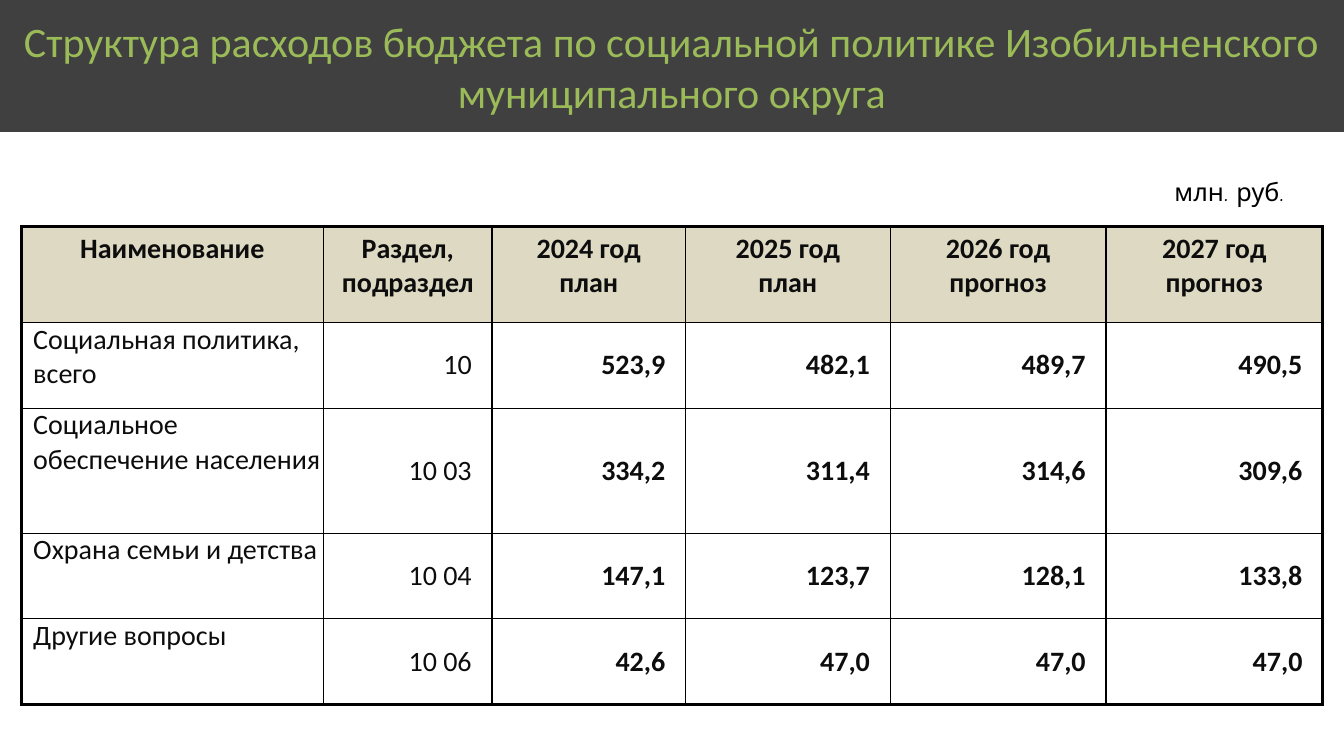
from lxml.etree import SubElement
from pptx import Presentation
from pptx.dml.color import RGBColor as Color
from pptx.enum.shapes import MSO_SHAPE as Shape
from pptx.enum.text import MSO_ANCHOR as Anchor, PP_ALIGN as Align
from pptx.oxml.ns import qn
from pptx.util import Inches, Pt

COLORS = {
    "band": "404040",
    "title": "9BBB59",
    "header": "DDD9C3",
    "cell": "0D0D0D",
    "black": "000000",
}
COLUMN_WIDTHS = [3, 1.67, 1.92, 2.03, 2.14, 2.15]
ROW_HEIGHTS = [0.95, 0.85, 1.24, 0.85, 0.85]
BUDGET = [
    ["Наименование", "Раздел, подраздел", "2024 год\vплан", "2025 год\vплан",
     "2026 год\vпрогноз", "2027 год\vпрогноз"],
    ["Социальная политика, всего", "10", "523,9", "482,1", "489,7", "490,5"],
    ["Социальное обеспечение населения", "10 03", "334,2", "311,4", "314,6", "309,6"],
    ["Охрана семьи и детства", "10 04", "147,1", "123,7", "128,1", "133,8"],
    ["Другие вопросы", "10 06", "42,6", "47,0", "47,0", "47,0"],
]


def color(name):
    return Color.from_string(COLORS[name])


def write(frame, text, size=20, font="Calibri", ink="cell", bold=False, align=Align.LEFT):
    paragraph = frame.paragraphs[0]
    paragraph.text = text
    paragraph.alignment = align
    for run in paragraph.runs:
        run.font.size = Pt(size)
        run.font.name = font
        run.font.bold = bold
        run.font.color.rgb = color(ink)


def set_margins(target, left, top, right, bottom):
    target.margin_left, target.margin_top = Inches(left), Inches(top)
    target.margin_right, target.margin_bottom = Inches(right), Inches(bottom)


def set_borders(cell, widths):
    """Draw the cell edges; widths maps L, R, T, B to points."""
    properties = cell._tc.get_or_add_tcPr()
    for side, width in widths.items():
        line = SubElement(properties, qn(f"a:ln{side}"), w=str(Pt(width)))
        fill = SubElement(line, qn("a:solidFill"))
        SubElement(fill, qn("a:srgbClr"), val=COLORS["black"])


class BudgetSlide:
    outer_border = 2.25
    inner_border = 1

    def __init__(self, presentation):
        self.slide = presentation.slides.add_slide(presentation.slide_layouts[6])

    def title_band(self, text, left, top, width, height):
        band = self.slide.shapes.add_shape(
            Shape.RECTANGLE, Inches(left), Inches(top), Inches(width), Inches(height))
        band.shadow.inherit = False
        band.fill.solid()
        band.fill.fore_color.rgb = color("band")
        band.line.fill.background()
        band.text_frame.word_wrap = True
        band.text_frame.vertical_anchor = Anchor.MIDDLE
        write(band.text_frame, text, size=30, ink="title", align=Align.CENTER)

    def label(self, text, left, top, width, height):
        box = self.slide.shapes.add_textbox(
            Inches(left), Inches(top), Inches(width), Inches(height))
        box.text_frame.word_wrap = False
        write(box.text_frame, text, size=18, font="Comic Neue", ink="black")

    def table(self, rows, left, top, widths, heights):
        table = self.slide.shapes.add_table(
            len(rows), len(widths), Inches(left), Inches(top),
            Inches(sum(widths)), Inches(sum(heights))).table
        for column, width in zip(table.columns, widths):
            column.width = Inches(width)
        for row, height in zip(table.rows, heights):
            row.height = Inches(height)
        for i, values in enumerate(rows):
            for j, text in enumerate(values):
                cell = table.cell(i, j)
                on_edge = {"L": j == 0, "R": j == len(widths) - 1,
                           "T": i == 0, "B": i == len(rows) - 1}
                set_borders(cell, {side: self.outer_border if edge else self.inner_border
                                   for side, edge in on_edge.items()})
                if i == 0:
                    self.header_cell(cell, text)
                else:
                    self.body_cell(cell, text, j)

    def header_cell(self, cell, text):
        cell.fill.solid()
        cell.fill.fore_color.rgb = color("header")
        set_margins(cell, 0.1, 0.05, 0.1, 0.05)
        write(cell.text_frame, text, bold=True, align=Align.CENTER)

    def body_cell(self, cell, text, column):
        cell.fill.background()
        if column == 0:
            set_margins(cell, 0.12, 0, 0, 0)
            write(cell.text_frame, text)
        else:
            set_margins(cell, 0, 0, 0.2, 0)
            cell.vertical_anchor = Anchor.MIDDLE
            write(cell.text_frame, text, bold=column > 1, align=Align.RIGHT)


def main():
    presentation = Presentation()
    presentation.slide_width = Inches(13.33)
    presentation.slide_height = Inches(7.5)
    page = BudgetSlide(presentation)
    page.title_band("Структура расходов бюджета по социальной политике "
                    "Изобильненского муниципального округа", 0, 0, 13.33, 1.31)
    page.table(BUDGET, 0.21, 2.25, COLUMN_WIDTHS, ROW_HEIGHTS)
    page.label("млн. руб.", 11.55, 1.7, 1.28, 0.4)
    presentation.save("out.pptx")


if __name__ == "__main__":
    main()
